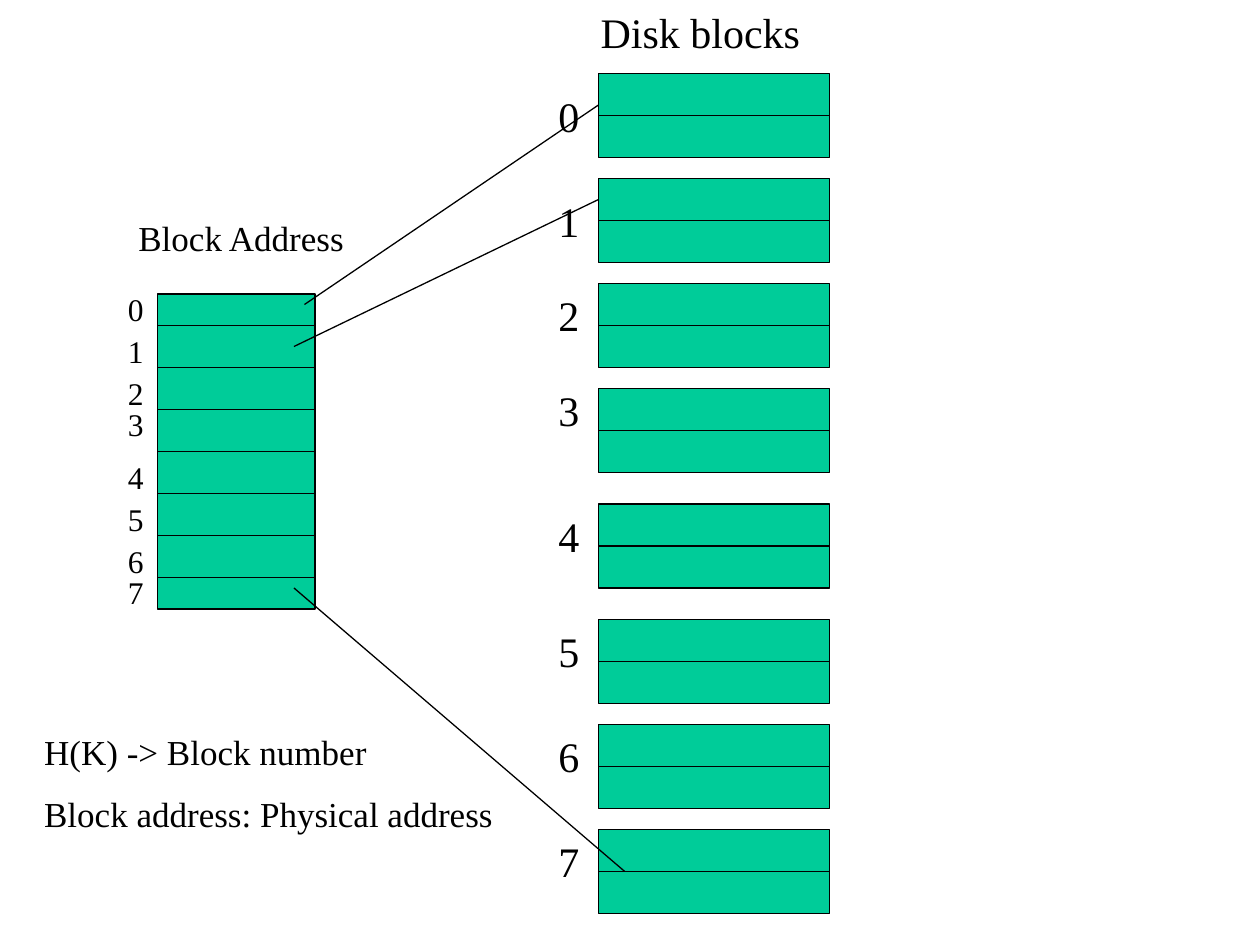
from lxml import etree
from pptx import Presentation
from pptx.dml.color import RGBColor
from pptx.enum.shapes import MSO_CONNECTOR, MSO_SHAPE
from pptx.enum.text import MSO_ANCHOR, MSO_AUTO_SIZE, PP_ALIGN
from pptx.oxml.ns import qn
from pptx.util import Cm, Pt

RECT = MSO_SHAPE.RECTANGLE
LINE = MSO_CONNECTOR.STRAIGHT
FRAME = {"word_wrap": True, "auto_size": MSO_AUTO_SIZE.NONE,
         "vertical_anchor": MSO_ANCHOR.TOP}
FONT = {"name": "Times New Roman", "bold": False}
UNIT = 2.54 / 12
GREEN, BLACK = "00CC99", "000000"


def grid(n):
    """Turn grid steps, twelve to the inch, into a length."""
    return Cm(n * UNIT)


def tint(fmt, hue):
    """Give a fill or line format a solid colour."""
    fill = getattr(fmt, "fill", fmt)
    fill.solid()
    fill.fore_color.rgb = RGBColor.from_string(hue)


def pen(shape):
    """Draw the outline thin and black."""
    tint(shape.line, BLACK)
    shape.line.width = Pt(0.75)


def write(shape, box, size, rows):
    """Place a text shape in its box and fill it with plain paragraphs."""
    for key, n in zip(("left", "top", "width", "height"), box):
        setattr(shape, key, grid(n))
    frame = shape.text_frame
    for key, val in FRAME.items():
        setattr(frame, key, val)
    frame.text = "\n".join(rows)
    for i, para in enumerate(frame.paragraphs):
        para.alignment = PP_ALIGN.LEFT
        para.space_before = Pt(size * 0.57 if i else 0)
        props = para._p.get_or_add_pPr()
        props.set("marL", "0")
        props.set("indent", "0")
        etree.SubElement(props, qn("a:buNone"))
        font = para.runs[0].font
        for key, val in {**FONT, "size": Pt(size)}.items():
            setattr(font, key, val)
        tint(font, BLACK)


def label(slide, box, size, text):
    """Add a one-line text box."""
    write(slide.shapes.add_textbox(0, 0, 0, 0), box, size, [text])


def stack(slide, box, cuts):
    """Draw a green box split by lines at the given depths."""
    x, y, w, h = box
    rect = slide.shapes.add_shape(RECT, *map(grid, box))
    rect.shadow.inherit = False
    tint(rect, GREEN)
    pen(rect)
    for cut in cuts:
        ends = x, y + cut, x + w, y + cut
        rule = slide.shapes.add_connector(LINE, *map(grid, ends))
        pen(rule)
        etree.SubElement(rule._element.spPr, qn("a:effectLst"))


def index(slide, box):
    """Draw the address table with its title and row numbers."""
    x, y, w, h = box
    stack(slide, box, range(3, h, 4))
    label(slide, (x - 3, y - 8, 23, 5), 20, "Block Address")
    for i, gap in enumerate((-1, 3, 7, 10, 15, 19, 23, 26)):
        label(slide, (x - 4, y + gap, 4, 5), 18, str(i))


def disk(slide, box):
    """Draw the column of numbered disk blocks under the slide title."""
    x, y, w, h = box
    write(slide.shapes.title, (x - 1, y - 7, 27, 6), 24, ["Disk blocks"])
    tops = 0, 10, 20, 30, 41, 52, 62, 72
    drops = 1, 1, 0, -1, 0, 0, 0, 0
    for i, (top, drop) in enumerate(zip(tops, drops)):
        stack(slide, (x, y + top, w, h), [h / 2])
        label(slide, (x - 5, y + top + drop, 5, 6), 24, str(i))


def link(slide, start, *stops):
    """Draw an open path from a table row to a disk block."""
    first, *rest = [tuple(map(grid, spot)) for spot in (start, *stops)]
    form = slide.shapes.build_freeform(*first)
    form.add_line_segments(rest, close=False)
    path = form.convert_to_shape()
    path.shadow.inherit = False
    path.fill.background()
    pen(path)


def main():
    """Build the slide and save it."""
    deck = Presentation()
    deck.slide_width, deck.slide_height = grid(120), grid(90)
    slide = deck.slides.add_slide(deck.slide_layouts[1])
    index(slide, (15, 28, 15, 30))
    disk(slide, (57, 7, 22, 8))
    link(slide, (29, 29), (57, 10))
    link(slide, (28, 33), (57, 19))
    link(slide, (28, 56), (59.5, 83), (56, 80))
    write(slide.placeholders[1], (3, 69, 49, 11), 20,
          ["H(K) -> Block number", "Block address: Physical address"])
    deck.save("out.pptx")


if __name__ == "__main__":
    main()
